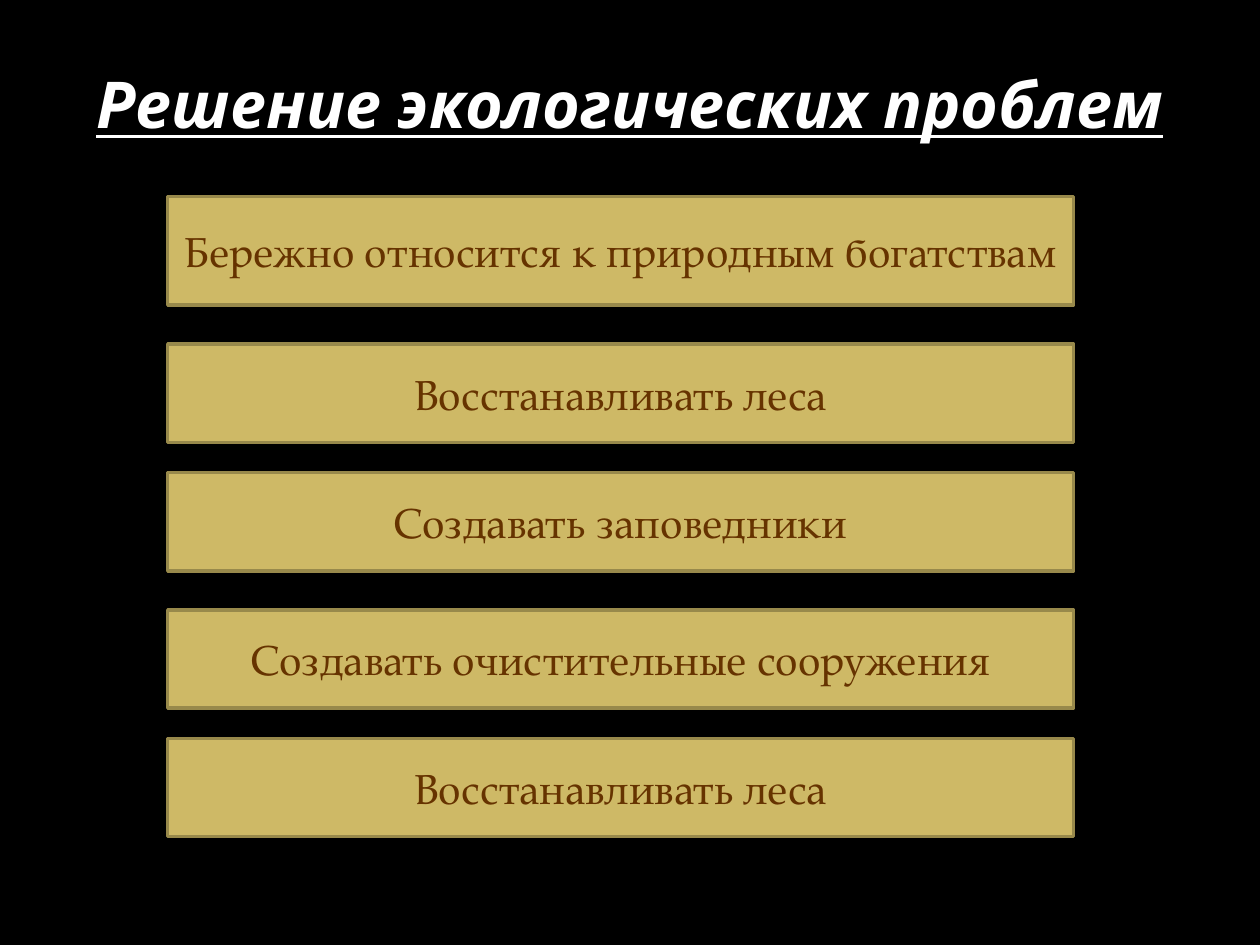
import pptx
import pptx.util
import pptx.dml.color
import pptx.enum.shapes
import pptx.enum.text

Pt = pptx.util.Pt

SOLUTIONS = [
    ("Бережно относится к природным богатствам", 112.3, 62),
    ("Восстанавливать леса", 196.6, 56.2),
    ("Создавать заповедники", 270, 56.2),
    ("Создавать очистительные сооружения", 348.5, 56.2),
    ("Восстанавливать леса", 421.9, 56.2),
]


def paint(target, color):
    """Give a fill or a line one solid colour."""
    target.solid()
    target.fore_color.rgb = pptx.dml.color.RGBColor.from_string(color)


def write_centred(box, text, font_name, size, color):
    """Write one centred line into a shape and return its font."""
    frame = box.text_frame
    frame.text = text
    frame.word_wrap = True
    frame.vertical_anchor = pptx.enum.text.MSO_ANCHOR.MIDDLE
    para = frame.paragraphs[0]
    para.alignment = pptx.enum.text.PP_ALIGN.CENTER
    font = para.runs[0].font
    font.name = font_name
    font.size = Pt(size)
    paint(font.fill, color)
    return font


def add_title(page, left, top, width, height):
    """Place the underlined slide title."""
    box = page.shapes.add_textbox(Pt(left), Pt(top), Pt(width), Pt(height))
    font = write_centred(box, "Решение экологических проблем", "Noto Sans", 36.9, "FFFFFF")
    font.bold = font.italic = font.underline = True


def add_solution(page, text, left, top, width, height):
    """Place one gold bar with a solution."""
    bar = page.shapes.add_shape(
        pptx.enum.shapes.MSO_SHAPE.RECTANGLE, Pt(left), Pt(top), Pt(width), Pt(height)
    )
    bar.shadow.inherit = False
    paint(bar.fill, "CEB966")
    paint(bar.line.fill, "98894B")
    bar.line.width = Pt(2)
    write_centred(bar, text, "TeX Gyre Pagella", 24, "663300")


def main():
    """Build the slide and save the deck."""
    deck = pptx.Presentation()
    deck.slide_width, deck.slide_height = Pt(720), Pt(540)
    page = deck.slides.add_slide(deck.slide_layouts[6])
    paint(page.background.fill, "000000")
    add_title(page, 36, 21.6, 648, 74.2)
    for text, top, height in SOLUTIONS:
        add_solution(page, text, 95.8, top, 517.7, height)
    deck.save("out.pptx")


if __name__ == "__main__":
    main()
